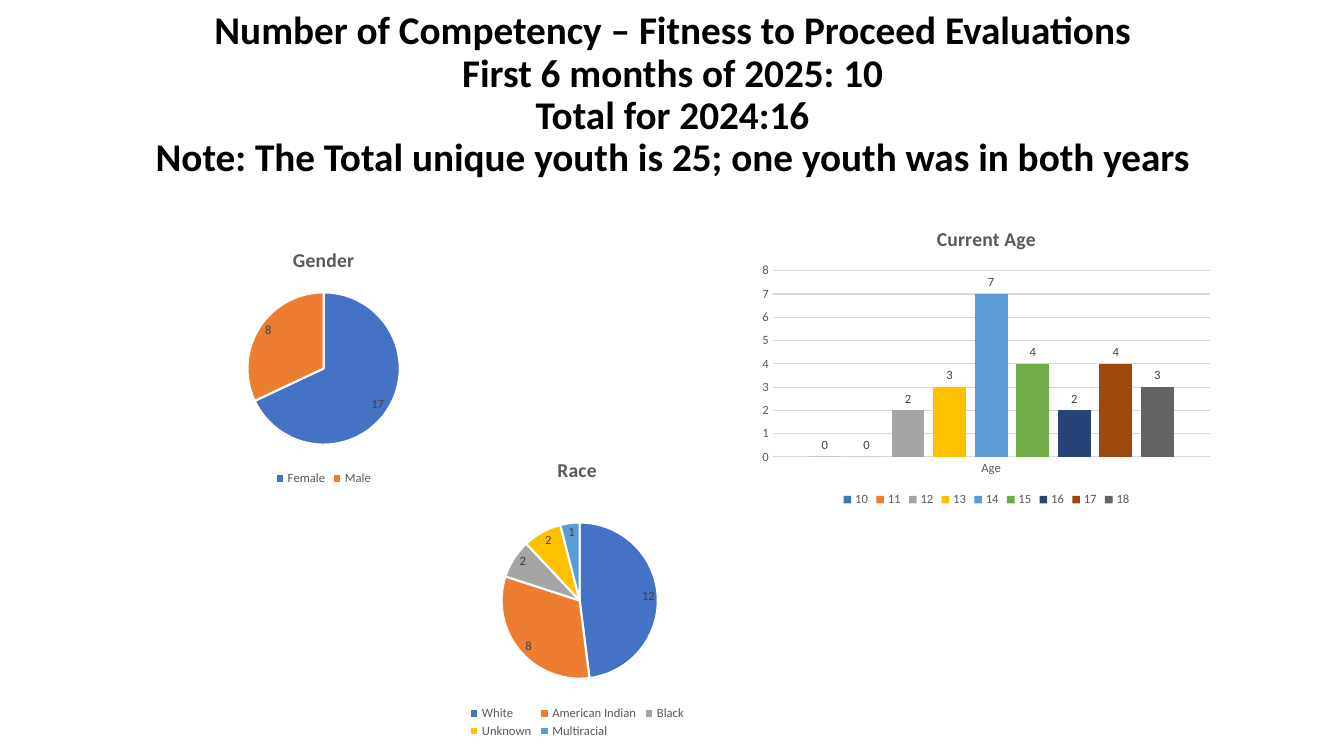
import pptx
import pptx.chart.data
import pptx.dml.color
import pptx.enum.chart
import pptx.enum.text
import pptx.oxml
import pptx.oxml.ns
import pptx.util
from pptx.util import Inches


class Theme:
    font = "Calibri"
    black, title_gray, label_gray, line_gray, white = "000000", "595959", "404040", "D9D9D9", "FFFFFF"
    palette = ["4472C4", "ED7D31", "A5A5A5", "FFC000", "5B9BD5",
               "70AD47", "264478", "9E480E", "636363"]
    heading, chart_title, chart_text, small = 28, 14, 10, 9


def style_font(font, size, color, bold=False):
    font.name = Theme.font
    font.size = pptx.util.Pt(size)
    font.bold = bold
    font.color.rgb = pptx.dml.color.RGBColor.from_string(color)


def set_layout(parent, index, box, inner=False):
    """Place a plot area or legend by fractions of its chart: left, top, width, height."""
    for old in parent.findall(pptx.oxml.ns.qn("c:layout")):
        parent.remove(old)
    target = '<c:layoutTarget val="inner"/>' if inner else ""
    values = "".join(f'<c:{name} val="{value}"/>' for name, value in zip("xywh", box))
    parent.insert(index, pptx.oxml.parse_xml(
        f'<c:layout {pptx.oxml.ns.nsdecls("c")}><c:manualLayout>{target}'
        f'<c:xMode val="edge"/><c:yMode val="edge"/>{values}</c:manualLayout></c:layout>'))


presentation = pptx.Presentation()
presentation.slide_width, presentation.slide_height = Inches(13.33), Inches(7.5)
slide = presentation.slides.add_slide(presentation.slide_layouts[5])

# Title
title = slide.shapes.title
title.left, title.top, title.width, title.height = map(Inches, (0.92, 0.05, 11.5, 1.8))
title_frame = title.text_frame
title_frame.text = """Number of Competency – Fitness to Proceed Evaluations
First 6 months of 2025: 10
Total for 2024:16
Note: The Total unique youth is 25; one youth was in both years"""
title_frame.word_wrap = True
title_frame.auto_size = pptx.enum.text.MSO_AUTO_SIZE.NONE
title_frame.vertical_anchor = pptx.enum.text.MSO_ANCHOR.MIDDLE
for paragraph in title_frame.paragraphs:
    paragraph.alignment = pptx.enum.text.PP_ALIGN.CENTER
    paragraph.line_spacing = 0.9
    style_font(paragraph.runs[0].font, Theme.heading, Theme.black, True)

# Charts: name, type, frame, categories, series, plot layout, legend layout
chart_type = pptx.enum.chart.XL_CHART_TYPE
chart_specs = [
    ("Gender", chart_type.PIE, (0.85, 2.3, 4.72, 2.56), ["Female", "Male"],
     {"Gender": [17, 8]}, (0.34, 0.23, 0.32, 0.6), None),
    ("Current Age", chart_type.COLUMN_CLUSTERED, (7.48, 2.09, 4.61, 2.98), ["Age"],
     {str(age): [count] for age, count in enumerate([0, 0, 2, 3, 7, 4, 2, 4, 3], 10)},
     (0.04, 0.2, 0.94, 0.62), None),
    ("Race", chart_type.PIE, (3.2, 4.38, 5.05, 2.98),
     ["White", "American Indian", "Black", "Unknown", "Multiracial"],
     {"Race": [12, 8, 2, 2, 1]}, (0.35, 0.27, 0.31, 0.52), (0.28, 0.87, 0.44, 0.13)),
]
charts = {}
for name, kind, frame, categories, series_values, plot_box, legend_box in chart_specs:
    chart_data = pptx.chart.data.CategoryChartData()
    chart_data.categories = categories
    for series_name, values in series_values.items():
        chart_data.add_series(series_name, values)
    chart = slide.shapes.add_chart(kind, *map(Inches, frame), chart_data).chart
    charts[name] = chart
    style_font(chart.font, Theme.chart_text, Theme.black)

    # Chart title and legend
    chart.has_title = True
    chart.chart_title.text_frame.text = name
    style_font(chart.chart_title.text_frame.paragraphs[0].runs[0].font,
               Theme.chart_title, Theme.title_gray, True)
    chart.has_legend = True
    chart.legend.position = pptx.enum.chart.XL_LEGEND_POSITION.BOTTOM
    chart.legend.include_in_layout = False
    style_font(chart.legend.font, Theme.small, Theme.title_gray)
    set_layout(chart.plots[0]._element.getparent(), 0, plot_box, inner=True)
    if legend_box:
        set_layout(chart.legend._element, 1, legend_box)

    # Colours and value labels
    is_pie = kind == chart_type.PIE
    plot = chart.plots[0]
    plot.vary_by_categories = is_pie
    position = pptx.enum.chart.XL_LABEL_POSITION
    for series in plot.series:
        labels = series.data_labels
        labels.show_value = True
        labels.position = position.BEST_FIT if is_pie else position.OUTSIDE_END
        style_font(labels.font, Theme.small, Theme.label_gray)
    parts = [plot.series[0].points[i] for i in range(len(categories))] if is_pie else plot.series
    for part, color in zip(parts, Theme.palette):
        part.format.fill.solid()
        part.format.fill.fore_color.rgb = pptx.dml.color.RGBColor.from_string(color)
        if is_pie:
            part.format.line.width = pptx.util.Pt(1.5)
            part.format.line.color.rgb = pptx.dml.color.RGBColor.from_string(Theme.white)

# Axes of the age chart
age_chart = charts["Current Age"]
age_chart.plots[0].gap_width = 219
age_chart.plots[0].overlap = -27
value_axis, category_axis = age_chart.value_axis, age_chart.category_axis
for axis in (value_axis, category_axis):
    axis.major_tick_mark = pptx.enum.chart.XL_TICK_MARK.NONE
    axis.minor_tick_mark = pptx.enum.chart.XL_TICK_MARK.NONE
    style_font(axis.tick_labels.font, Theme.small, Theme.title_gray)
value_axis.minimum_scale, value_axis.maximum_scale, value_axis.major_unit = 0, 8, 1
value_axis.format.line.fill.background()
value_axis.has_major_gridlines = True
for line in (value_axis.major_gridlines.format.line, category_axis.format.line):
    line.width = pptx.util.Pt(0.75)
    line.color.rgb = pptx.dml.color.RGBColor.from_string(Theme.line_gray)

presentation.save("out.pptx")
